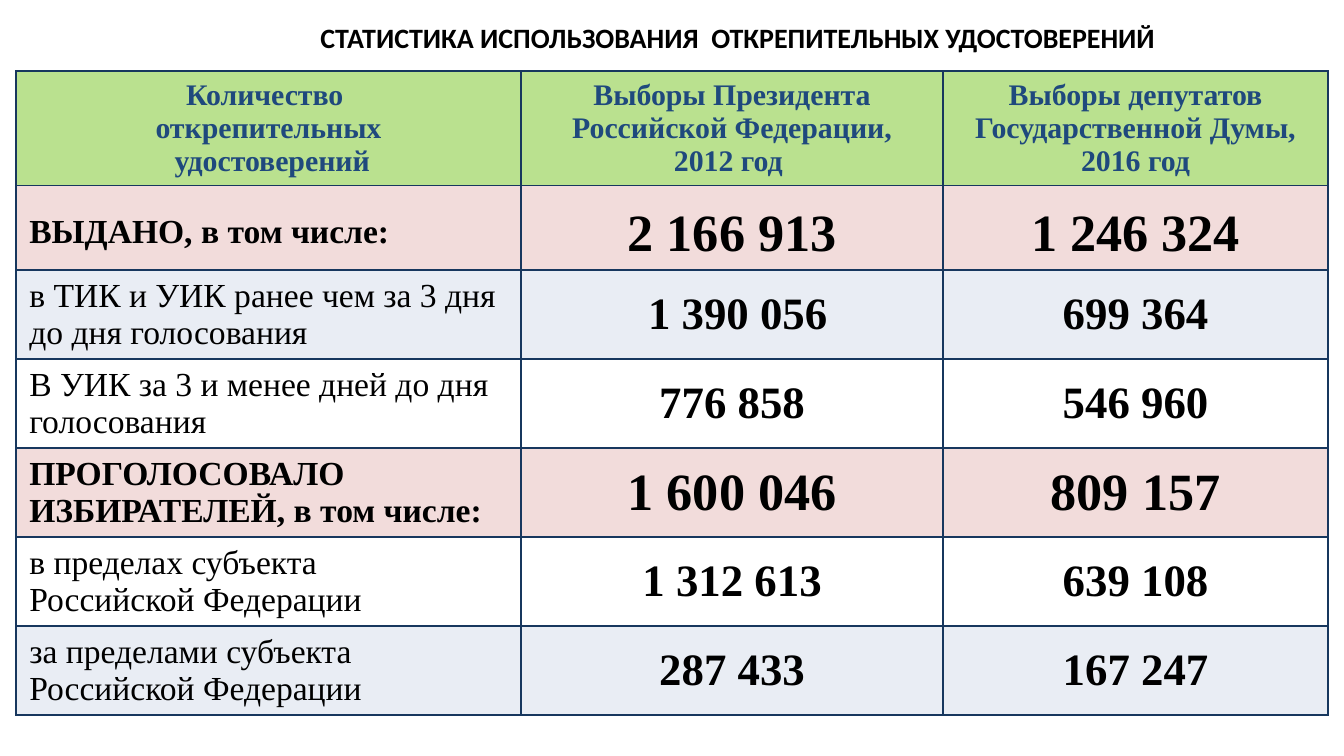
import dataclasses

import pptx
import pptx.dml.color
import pptx.enum.text
import pptx.oxml
import pptx.oxml.ns
import pptx.util

Cm = pptx.util.Cm
Pt = pptx.util.Pt
ALIGN = pptx.enum.text.PP_ALIGN
ANCHOR = pptx.enum.text.MSO_ANCHOR


@dataclasses.dataclass(frozen=True)
class Theme:
    title_font: str = "Calibri"
    table_font: str = "Times New Roman"
    text: str = "000000"
    header_text: str = "1F497D"
    header_fill: str = "BAE18F"
    total_fill: str = "F2DCDB"
    tinted_fill: str = "E9EDF4"
    plain_fill: str = "FFFFFF"
    border: str = "17375E"
    border_width: int = 1
    title_size: int = 15
    header_size: int = 16
    label_size: int = 18
    value_size: int = 24
    total_size: int = 28


THEME = Theme()

TITLE = "СТАТИСТИКА ИСПОЛЬЗОВАНИЯ  ОТКРЕПИТЕЛЬНЫХ УДОСТОВЕРЕНИЙ"

# Each heading is a list of paragraphs
HEADINGS = [
    ["Количество ", "открепительных", " удостоверений"],
    ["Выборы Президента Российской Федерации,", "2012 год "],
    ["Выборы депутатов Государственной Думы, 2016 год"],
]

# Label, 2012 value, 2016 value, fill, whether the row is a total
ROWS = [
    ("ВЫДАНО, в том числе:", "2 166 913", "1 246 324", THEME.total_fill, True),
    ("в ТИК и УИК ранее чем за 3 дня до дня голосования", " 1 390 056", "699 364",
     THEME.tinted_fill, False),
    ("В УИК за 3 и менее дней до дня голосования", "776 858", "546 960",
     THEME.plain_fill, False),
    ("ПРОГОЛОСОВАЛО ИЗБИРАТЕЛЕЙ, в том числе:", "1 600 046", "809 157",
     THEME.total_fill, True),
    ("в пределах субъекта \vРоссийской Федерации", "1 312 613", "639 108",
     THEME.plain_fill, False),
    ("за пределами субъекта Российской Федерации", "287 433", "167 247",
     THEME.tinted_fill, False),
]

COLUMN_WIDTHS = [9.55, 7.97, 7.28]
ROW_HEIGHTS = [2.16, 1.6] + [1.68] * 5


def write_text(text_frame, paragraphs, *, size, font=THEME.table_font,
               color=THEME.text, bold=True, align=ALIGN.CENTER):
    for index, text in enumerate(paragraphs):
        paragraph = text_frame.add_paragraph() if index else text_frame.paragraphs[0]
        paragraph.text = text
        paragraph.alignment = align
        for run in paragraph.runs:
            run.font.name = font
            run.font.size = Pt(size)
            run.font.bold = bold
            run.font.color.rgb = pptx.dml.color.RGBColor.from_string(color)


def add_borders(cell):
    properties = cell._tc.get_or_add_tcPr()
    for side in ("lnL", "lnR", "lnT", "lnB"):
        properties.append(pptx.oxml.parse_xml(
            f'<a:{side} {pptx.oxml.ns.nsdecls("a")} w="{Pt(THEME.border_width)}">'
            f'<a:solidFill><a:srgbClr val="{THEME.border}"/></a:solidFill>'
            f'</a:{side}>'))


def style_cell(cell, fill):
    add_borders(cell)
    cell.fill.solid()
    cell.fill.fore_color.rgb = pptx.dml.color.RGBColor.from_string(fill)
    cell.vertical_anchor = ANCHOR.MIDDLE
    # Text is centred vertically, so the row height alone sets the spacing
    cell.margin_top = cell.margin_bottom = Cm(0)


def add_title(slide):
    box = slide.shapes.add_textbox(Cm(-0.1), Cm(-0.05), Cm(28.1), Cm(1.52))
    box.text_frame.word_wrap = True
    box.text_frame.vertical_anchor = ANCHOR.MIDDLE
    write_text(box.text_frame, [TITLE], size=THEME.title_size, font=THEME.title_font)


def add_statistics_table(slide):
    table = slide.shapes.add_table(
        len(ROW_HEIGHTS), len(COLUMN_WIDTHS), Cm(0.3), Cm(1.34),
        Cm(sum(COLUMN_WIDTHS)), Cm(sum(ROW_HEIGHTS))).table
    for column, width in zip(table.columns, COLUMN_WIDTHS):
        column.width = Cm(width)
    for row, height in zip(table.rows, ROW_HEIGHTS):
        row.height = Cm(height)

    # Header row
    for column, heading in enumerate(HEADINGS):
        cell = table.cell(0, column)
        style_cell(cell, THEME.header_fill)
        write_text(cell.text_frame, heading, size=THEME.header_size,
                   color=THEME.header_text)

    # Data rows
    for row, (label, *values, fill, is_total) in enumerate(ROWS, start=1):
        label_cell = table.cell(row, 0)
        style_cell(label_cell, fill)
        write_text(label_cell.text_frame, [label], size=THEME.label_size,
                   bold=is_total, align=ALIGN.LEFT)
        for column, value in enumerate(values, start=1):
            cell = table.cell(row, column)
            style_cell(cell, fill)
            write_text(cell.text_frame, [value],
                       size=THEME.total_size if is_total else THEME.value_size)

    # The first total sits slightly below the middle of its row
    for column, margin in enumerate((0.16, 0.23, 0.23)):
        table.cell(1, column).margin_top = Cm(margin)


def main():
    presentation = pptx.Presentation()
    presentation.slide_width = Cm(25.4)
    presentation.slide_height = Cm(14.28)
    slide = presentation.slides.add_slide(presentation.slide_layouts[6])
    add_title(slide)
    add_statistics_table(slide)
    presentation.save("out.pptx")


if __name__ == "__main__":
    main()
